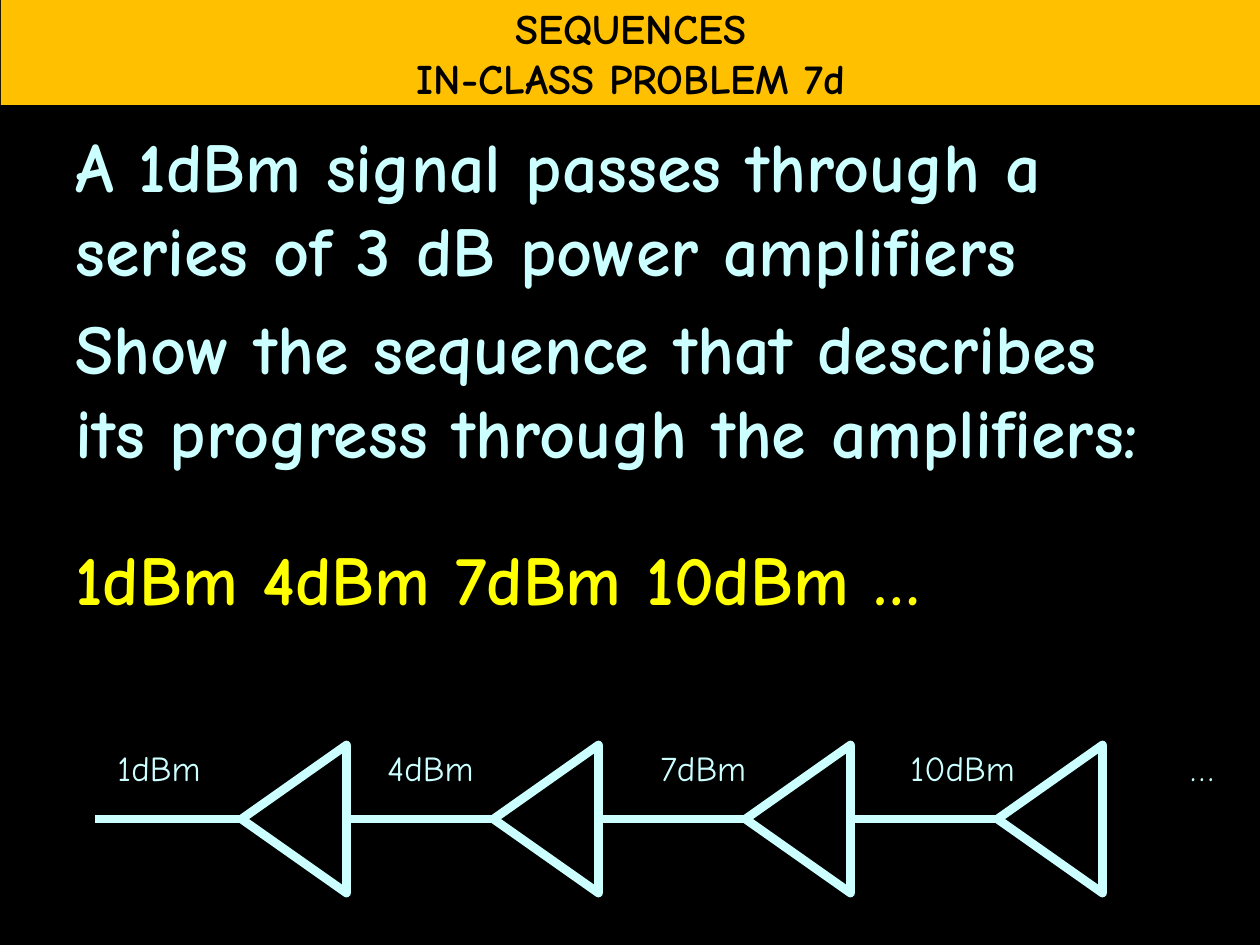
from lxml import etree
from pptx import Presentation, util as u
from pptx.dml.color import RGBColor
from pptx.enum import shapes, text
from pptx.oxml.ns import qn

BLACK = RGBColor(0x00, 0x00, 0x00)
GOLD = RGBColor(0xFF, 0xC0, 0x00)
ICE = RGBColor(0xCC, 0xFF, 0xFF)
YELLOW = RGBColor(0xFF, 0xFF, 0x00)
FONT = "Comic Neue"
PX = u.Inches(1) / 126

HEADER = ["SEQUENCES", "IN-CLASS PROBLEM 7d"]
# text, colour, space before in points
BODY = [
    ("A 1dBm signal passes through a series of 3 dB power amplifiers", ICE, 8),
    ("Show the sequence that describes its progress through the amplifiers:", ICE, 8),
    ("1dBm 4dBm 7dBm 10dBm …", YELLOW, 36),
]
LEVELS = ["1dBm", "4dBm", "7dBm", "10dBm", "…"]
LEVEL_TABS = [270, 543, 793, 1073]

STAGES = 4
STAGE_PITCH = 252
WIRE_LEFT, WIRE_LENGTH, WIRE_Y = 95, 147, 819
AMP_BASE, AMP_DEPTH = 148, 105
AMP_CENTER = 294


def px(*lengths):
    return [u.Emu(round(length * PX)) for length in lengths]


def write(paragraph, content, **font_values):
    run = paragraph.add_run()
    run.text = content
    color = font_values.pop("color")
    for name, value in {"name": FONT, **font_values}.items():
        setattr(run.font, name, value)
    run.font.color.rgb = color


def next_paragraph(frame, index):
    return frame.add_paragraph() if index else frame.paragraphs[0]


def add_header(slide):
    bar = slide.shapes.add_shape(shapes.MSO_SHAPE.RECTANGLE, *px(1, 0, 1260, 105))
    bar.shadow.inherit = False
    bar.fill.solid()
    bar.fill.fore_color.rgb = GOLD
    bar.line.fill.background()
    frame = bar.text_frame
    frame.word_wrap = False
    frame.vertical_anchor = text.MSO_ANCHOR.MIDDLE
    for index, content in enumerate(HEADER):
        paragraph = next_paragraph(frame, index)
        paragraph.alignment = text.PP_ALIGN.CENTER
        write(paragraph, content, size=u.Pt(24), bold=True, color=BLACK)


def add_body(slide):
    frame = slide.shapes.add_textbox(*px(63, 116, 1134, 777)).text_frame
    frame.word_wrap = True
    for index, (content, color, space) in enumerate(BODY):
        paragraph = next_paragraph(frame, index)
        paragraph.space_before = u.Pt(space)
        write(paragraph, content, size=u.Pt(40), bold=True, color=color)


def add_amplifier_chain(slide):
    chain = slide.shapes.add_group_shape().shapes
    for stage in range(STAGES):
        offset = stage * STAGE_PITCH
        left = WIRE_LEFT + offset
        wire = chain.add_connector(
            shapes.MSO_CONNECTOR.STRAIGHT,
            *px(left, WIRE_Y, left + WIRE_LENGTH, WIRE_Y))
        amplifier = chain.add_shape(
            shapes.MSO_SHAPE.ISOSCELES_TRIANGLE,
            *px(AMP_CENTER + offset - AMP_BASE / 2, WIRE_Y - AMP_DEPTH / 2,
                AMP_BASE, AMP_DEPTH))
        amplifier.rotation = 270
        amplifier.shadow.inherit = False
        amplifier.fill.background()
        for part in (wire, amplifier):
            part.line.color.rgb = ICE
            part.line.width = u.Pt(5)
        etree.SubElement(wire._element.spPr, qn("a:effectLst"))


def add_levels(slide):
    """Label the wires in one line of text, spaced by tab stops."""
    frame = slide.shapes.add_textbox(*px(105, 740, 1155, 55)).text_frame
    frame.word_wrap = True
    paragraph = frame.paragraphs[0]
    write(paragraph, "\t".join(LEVELS), size=u.Pt(20), color=ICE)
    tabs = etree.SubElement(paragraph._p.get_or_add_pPr(), qn("a:tabLst"))
    for position in px(*LEVEL_TABS):
        etree.SubElement(tabs, qn("a:tab"), pos=str(int(position)), algn="l")


def main():
    presentation = Presentation()
    presentation.slide_width, presentation.slide_height = px(1260, 945)
    slide = presentation.slides.add_slide(presentation.slide_layouts[6])
    slide.background.fill.solid()
    slide.background.fill.fore_color.rgb = BLACK
    add_body(slide)
    add_header(slide)
    add_amplifier_chain(slide)
    add_levels(slide)
    presentation.save("out.pptx")


if __name__ == "__main__":
    main()
